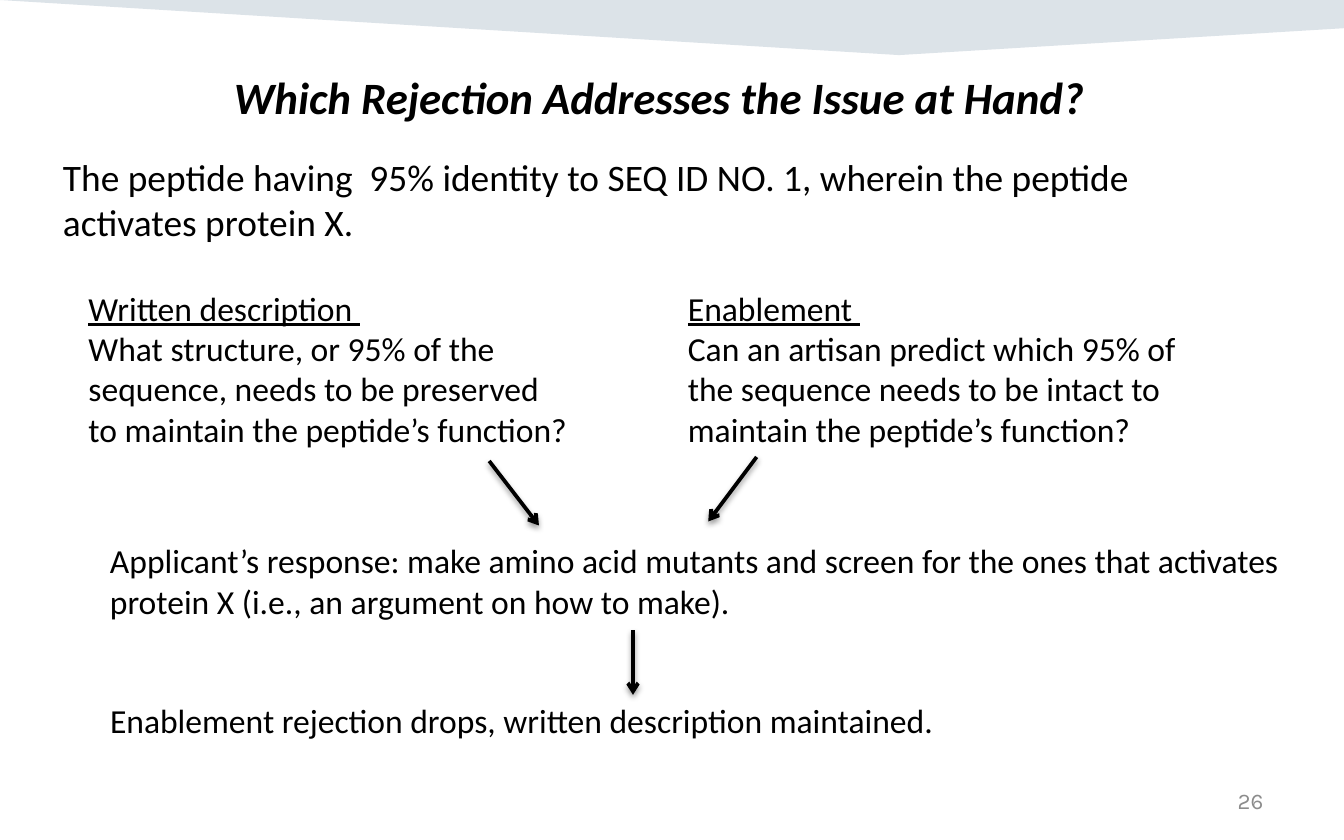
import pptx
import pptx.util
import pptx.dml.color
import pptx.enum.shapes
import pptx.enum.text
import pptx.oxml
from pptx.util import Inches

NS = 'xmlns:a="http://schemas.openxmlformats.org/drawingml/2006/main"'
BLACK = "000000"


def color(hex_text):
    return pptx.dml.color.RGBColor.from_string(hex_text)


def write(box, lines, size, wrap=False, font="Calibri", fill=BLACK):
    frame = box.text_frame
    frame.text = "\n".join(lines)
    frame.word_wrap = wrap
    frame.auto_size = pptx.enum.text.MSO_AUTO_SIZE.NONE
    frame.vertical_anchor = pptx.enum.text.MSO_ANCHOR.TOP
    for para in frame.paragraphs:
        para.alignment = pptx.enum.text.PP_ALIGN.LEFT
        for span in para.runs:
            span.font.name = font
            span.font.size = pptx.util.Pt(size)
            span.font.color.rgb = color(fill)
    return frame


deck = pptx.Presentation()
deck.slide_width = Inches(10)
deck.slide_height = Inches(6.25)
page = deck.slides.add_slide(deck.slide_layouts[5])

# Pale band along the top edge
outline = page.shapes.build_freeform(0, 0, scale=Inches(1) / 100)
outline.add_line_segments([(1000, 0), (1000, 21), (669, 41)], close=True)
band = outline.convert_to_shape()
band.shadow.inherit = False
band.line.fill.background()
band.fill.solid()
band.fill.fore_color.rgb = color("164469")
band_color = band.fill._xPr.solidFill.srgbClr
band_color.append(pptx.oxml.parse_xml(f'<a:alpha {NS} val="15000"/>'))

# Title
title = page.shapes.title
title.left, title.top = Inches(1.64), Inches(0.47)
title.width, title.height = Inches(6.58), Inches(0.5)
heading = write(title, ["Which Rejection Addresses the Issue at Hand?"], 24)
heading.paragraphs[0].runs[0].font.bold = True
heading.paragraphs[0].runs[0].font.italic = True

# Claim, applicant's response and outcome
statements = [
    (0.37, 1.1, 8.41, 0.77, 20,
     ["The peptide having  95% identity to SEQ ID NO. 1, wherein the peptide",
      "activates protein X."]),
    (0.72, 3.97, 9.06, 0.71, 18,
     ["Applicant’s response: make amino acid mutants and screen for the ones that activates",
      "protein X (i.e., an argument on how to make)."]),
    (0.72, 5.16, 6.41, 0.4, 18,
     ["Enablement rejection drops, written description maintained."]),
]
for left, top, width, height, size, lines in statements:
    box = page.shapes.add_textbox(Inches(left), Inches(top), Inches(width), Inches(height))
    write(box, lines, size)

# The two rejections, each with an underlined heading
rejections = [
    (0.56, 3.81, "Written description ",
     "What structure, or 95% of the sequence, needs to be preserved "
     "to maintain the peptide’s function?"),
    (5.02, 4, "Enablement ",
     "Can an artisan predict which 95% of the sequence needs to be intact "
     "to maintain the peptide’s function?"),
]
for left, width, name, question in rejections:
    box = page.shapes.add_textbox(Inches(left), Inches(2.09), Inches(width), Inches(1.31))
    frame = write(box, [name, question], 18, wrap=True)
    frame.paragraphs[0].runs[0].font.underline = True

# Arrows leading to the response and the outcome
arrows = [(5.63, 3.4, 5.27), (3.64, 3.43, 4.01), (4.71, 4.69, 4.71)]
for start_x, start_y, end_x in arrows:
    arrow = page.shapes.add_connector(
        pptx.enum.shapes.MSO_CONNECTOR.STRAIGHT,
        Inches(start_x), Inches(start_y), Inches(end_x), Inches(start_y + 0.48))
    arrow.line.color.rgb = color(BLACK)
    arrow.line.width = pptx.util.Pt(2)
    arrow.line._get_or_add_ln().append(pptx.oxml.parse_xml(f'<a:tailEnd {NS} type="arrow"/>'))
    arrow._element.spPr.append(pptx.oxml.parse_xml(
        f'<a:effectLst {NS}><a:outerShdw blurRad="39370" dist="20320" dir="5400000" '
        'rotWithShape="0"><a:srgbClr val="000000"><a:alpha val="38000"/></a:srgbClr>'
        '</a:outerShdw></a:effectLst>'))

# Page number
number = page.shapes.add_textbox(Inches(7.17), Inches(5.79), Inches(2.33), Inches(0.33))
frame = write(number, ["26"], 12, wrap=True, font="Karla", fill="8C8C8C")
frame.vertical_anchor = pptx.enum.text.MSO_ANCHOR.MIDDLE
frame.paragraphs[0].alignment = pptx.enum.text.PP_ALIGN.RIGHT

deck.save("out.pptx")
